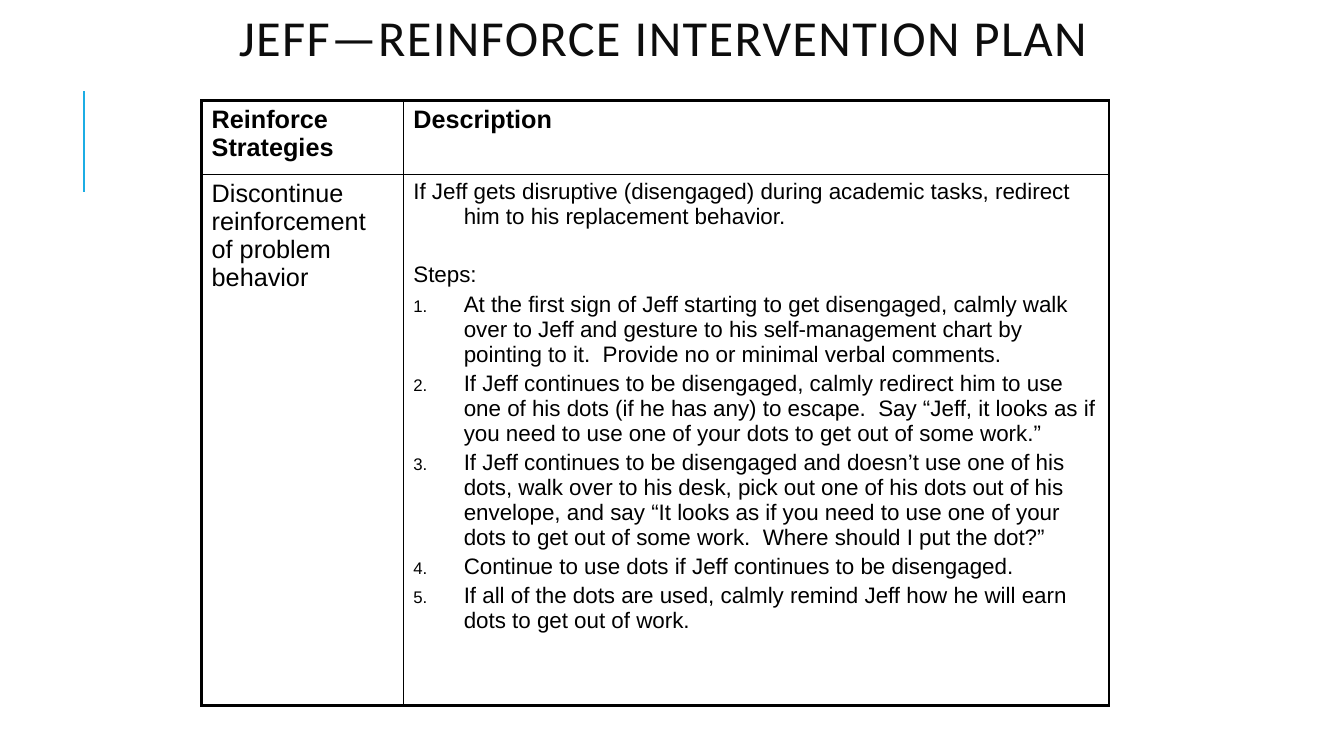
from lxml import etree
from pptx import Presentation
from pptx.dml.color import RGBColor
from pptx.enum.shapes import MSO_CONNECTOR
from pptx.enum.text import MSO_ANCHOR, PP_ALIGN
from pptx.oxml.ns import qn
from pptx.util import Inches, Pt

STRAIGHT = MSO_CONNECTOR.STRAIGHT
CENTER = PP_ALIGN.CENTER
MIDDLE = MSO_ANCHOR.MIDDLE


def rgb(value):
    return RGBColor.from_string(value)


def add_xml(parent, tag, **attrs):
    return etree.SubElement(parent, qn(tag), {k: str(v) for k, v in attrs.items()})


prs = Presentation()
prs.slide_width = Inches(13.33)
prs.slide_height = Inches(7.5)
s = prs.slides.add_slide(prs.slide_layouts[6])

accent = s.shapes.add_connector(
    STRAIGHT, Inches(0.83), Inches(1.9), Inches(0.83), Inches(0.9))
accent.line.color.rgb = rgb("1CADE4")
accent.line.width = Pt(1.5)
add_xml(accent._element.spPr, "a:effectLst")

title = s.shapes.add_textbox(Inches(2.08), Inches(0), Inches(9), Inches(0.83))
tf = title.text_frame
tf.word_wrap = True
tf.vertical_anchor = MIDDLE
p = tf.paragraphs[0]
p.alignment = CENTER
p.line_spacing = 0.8
r = p.add_run()
r.text = "JEFF—REINFORCE INTERVENTION PLAN"
r.font.name = "Calibri"
r.font.size = Pt(36)
r.font.color.rgb = rgb("0D0D0D")
r._r.get_or_add_rPr().set("spc", "100")

intro = [
    "If Jeff gets disruptive (disengaged) during academic tasks, redirect him to his replacement behavior.",
    "Steps:",
]
steps = [
    "At the first sign of Jeff starting to get disengaged, calmly walk over to Jeff and gesture to his self-management chart by pointing to it.  Provide no or minimal verbal comments.",
    "If Jeff continues to be disengaged, calmly redirect him to use one of his dots (if he has any) to escape.  Say “Jeff, it looks as if you need to use one of your dots to get out of some work.”",
    "If Jeff continues to be disengaged and doesn’t use one of his dots, walk over to his desk, pick out one of his dots out of his envelope, and say “It looks as if you need to use one of your dots to get out of some work.  Where should I put the dot?”",
    "Continue to use dots if Jeff continues to be disengaged.",
    "If all of the dots are used, calmly remind Jeff how he will earn dots to get out of work.",
]
rows = [
    [["Reinforce Strategies"], ["Description"]],
    [["Discontinue reinforcement of problem behavior"], intro + steps],
]

table = s.shapes.add_table(
    2, 2, Inches(2), Inches(1), Inches(9), Inches(6)).table
table.first_row = False
table.horz_banding = False
for col, width in zip(table.columns, (2, 7)):
    col.width = Inches(width)
for row, height in zip(table.rows, (0.73, 5.27)):
    row.height = Inches(height)

for i, row in enumerate(rows):
    for j, texts in enumerate(row):
        cell = table.cell(i, j)
        cell.fill.background()
        tcPr = cell._tc.get_or_add_tcPr()
        outer_sides = {"L": j == 0, "R": j == 1, "T": i == 0, "B": i == 1}
        for k, (side, outer) in enumerate(outer_sides.items()):
            ln = add_xml(tcPr, "a:ln" + side, w=Pt(2.25 if outer else 1))
            add_xml(add_xml(ln, "a:solidFill"), "a:srgbClr", val="000000")
            tcPr.insert(k, ln)
        tf = cell.text_frame
        for n, text in enumerate(texts):
            p = tf.paragraphs[0] if n == 0 else tf.add_paragraph()
            p.text = text
            pPr = p._p.get_or_add_pPr()
            if len(texts) > 1:
                pPr.set("marL", str(Inches(0.5)))
                pPr.set("indent", str(Inches(-0.5)))
            if n:
                p.space_before = Pt(24 if text == "Steps:" else 3.2)
            if text in steps:
                add_xml(add_xml(pPr, "a:buClr"), "a:srgbClr", val="000000")
                add_xml(pPr, "a:buSzPct", val=75000)
                add_xml(pPr, "a:buAutoNum", type="arabicPeriod")
            p.font.name = "Arial"
            p.font.size = Pt(16 if len(texts) > 1 else 18)
            p.font.bold = i == 0
            p.font.color.rgb = rgb("000000")

prs.save("out.pptx")
